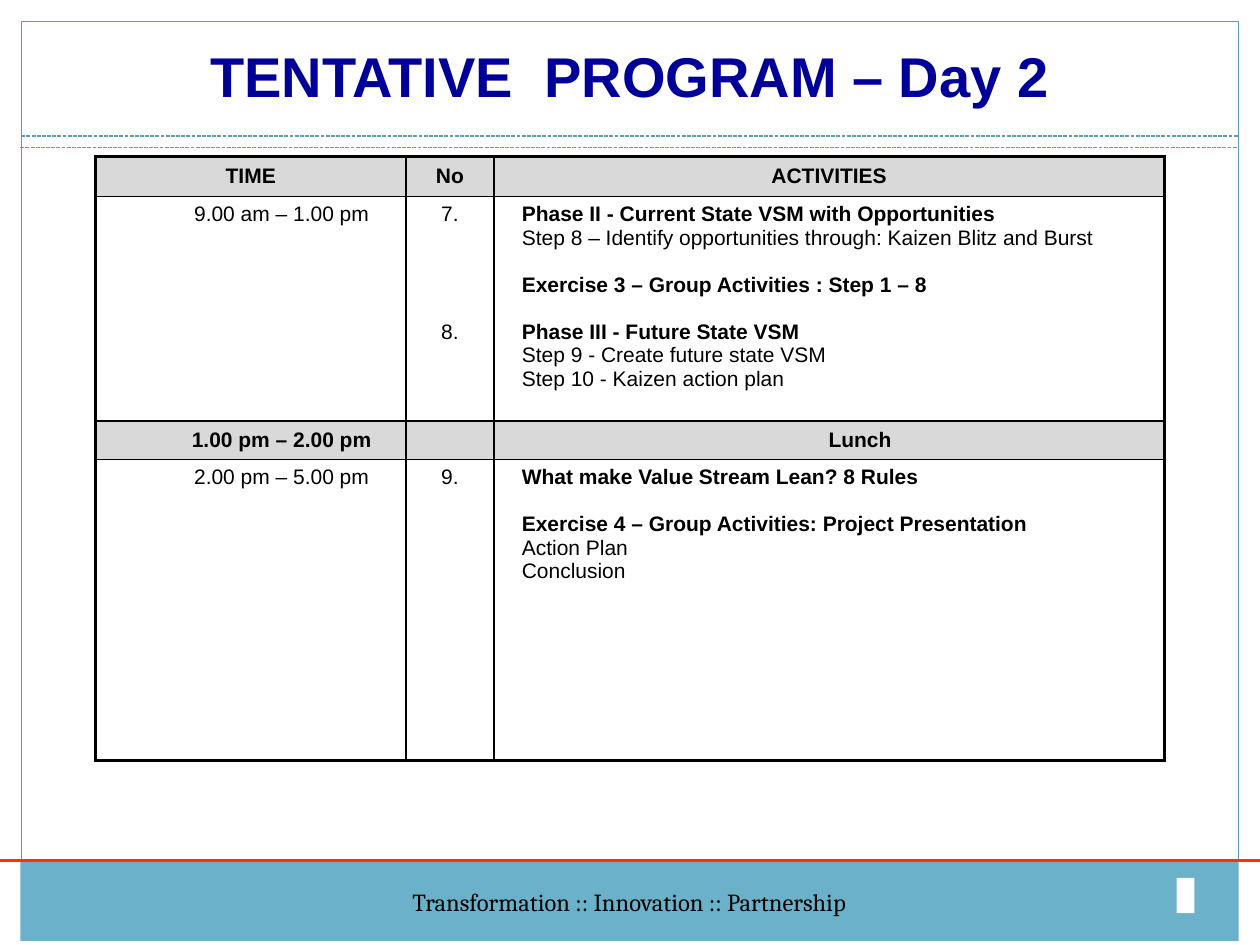
from lxml import etree
from pptx import Presentation
from pptx.dml.color import RGBColor
from pptx.enum.dml import MSO_LINE
from pptx.enum.shapes import MSO_CONNECTOR, MSO_SHAPE
from pptx.enum.text import MSO_ANCHOR, PP_ALIGN
from pptx.oxml.ns import qn
from pptx.util import Cm, Pt

RECTANGLE = MSO_SHAPE.RECTANGLE
STRAIGHT = MSO_CONNECTOR.STRAIGHT
DASH = MSO_LINE.SQUARE_DOT
CENTER, LEFT = PP_ALIGN.CENTER, PP_ALIGN.LEFT
TOP, MIDDLE = MSO_ANCHOR.TOP, MSO_ANCHOR.MIDDLE

BLACK = RGBColor(0x00, 0x00, 0x00)
WHITE = RGBColor(0xFF, 0xFF, 0xFF)
GREY = RGBColor(0xD9, 0xD9, 0xD9)
NAVY = RGBColor(0x00, 0x00, 0x99)
TEAL = RGBColor(0x5E, 0x9C, 0xB1)
FOOTER_BLUE = RGBColor(0x6B, 0xB1, 0xC9)
ORANGE = RGBColor(0xFF, 0x33, 0x00)

LINE_HEIGHT = 13.43


def format_text(paragraph, name, size, color, bold=False, alignment=CENTER):
    paragraph.alignment = alignment
    for run in paragraph.runs:
        run.font.name = name
        run.font.size = Pt(size)
        run.font.bold = bold
        run.font.color.rgb = color


def set_borders(cell, widths):
    properties = cell._tc.get_or_add_tcPr()
    for position, (side, width) in enumerate(zip("LRTB", widths)):
        border = etree.Element(qn(f"a:ln{side}"), w=str(Pt(width)))
        fill = etree.SubElement(border, qn("a:solidFill"))
        etree.SubElement(fill, qn("a:srgbClr"), val=str(BLACK))
        properties.insert(position, border)


presentation = Presentation()
presentation.slide_width = Cm(25.4)
presentation.slide_height = Cm(19.05)
slide = presentation.slides.add_slide(presentation.slide_layouts[6])
shapes = slide.shapes

footer = shapes.add_shape(RECTANGLE, Cm(0.41), Cm(17.37), Cm(24.56), Cm(1.6))
frame = shapes.add_shape(RECTANGLE, Cm(0.43), Cm(0.43), Cm(24.54), Cm(16.94))
number_box = shapes.add_shape(RECTANGLE, Cm(23.72), Cm(17.7), Cm(0.36), Cm(0.71))
for shape, color in ((footer, FOOTER_BLUE), (number_box, WHITE)):
    shape.shadow.inherit = False
    shape.fill.solid()
    shape.fill.fore_color.rgb = color
    shape.line.fill.background()
frame.shadow.inherit = False
frame.fill.background()
frame.line.color.rgb = TEAL
frame.line.width = Pt(0.75)

footer.text_frame.text = "Transformation :: Innovation :: Partnership"
footer.text_frame.vertical_anchor = MIDDLE
format_text(footer.text_frame.paragraphs[0], "Cambria", 14, BLACK)

for left, right, y, color, width, dash in (
    (0.41, 24.94, 2.97, TEAL, 0.75, DASH),
    (0.43, 24.97, 2.74, TEAL, 0.75, DASH),
    (0, 25.4, 17.35, ORANGE, 2, None),
):
    connector = shapes.add_connector(STRAIGHT, Cm(left), Cm(y), Cm(right), Cm(y))
    connector.line.color.rgb = color
    connector.line.width = Pt(width)
    connector.line.dash_style = dash
    etree.SubElement(connector._element.spPr, qn("a:effectLst"))

# Each entry holds text, bold and the number of empty lines above it.
rows = [
    [[("TIME", True, 0)], [("No", True, 0)], [("ACTIVITIES", True, 0)]],
    [
        [("9.00 am – 1.00 pm", False, 0)],
        [("7.", False, 0), ("8.", False, 4)],
        [
            ("Phase II - Current State VSM with Opportunities", True, 0),
            ("Step 8 – Identify opportunities through: Kaizen Blitz and Burst", False, 0),
            ("Exercise 3 – Group Activities : Step 1 – 8", True, 1),
            ("Phase III - Future State VSM", True, 1),
            ("Step 9 - Create future state VSM", False, 0),
            ("Step 10 - Kaizen action plan", False, 0),
        ],
    ],
    [[("1.00 pm – 2.00 pm", True, 0)], [], [("Lunch", True, 0)]],
    [
        [("2.00 pm – 5.00 pm", False, 0)],
        [("9.", False, 0)],
        [
            ("What make Value Stream Lean? 8 Rules", True, 0),
            ("Exercise 4 – Group Activities: Project Presentation", True, 1),
            ("Action Plan", False, 0),
            ("Conclusion", False, 0),
        ],
    ],
]
column_widths = [6.25, 1.78, 13.51]
row_heights = [0.81, 4.53, 0.74, 6.07]
last_row, last_column = len(rows) - 1, len(column_widths) - 1

table = shapes.add_table(
    len(rows), len(column_widths), Cm(1.93), Cm(3.15),
    Cm(sum(column_widths)), Cm(sum(row_heights)),
).table
table.first_row = False
table.horz_banding = False
for column, width in zip(table.columns, column_widths):
    column.width = Cm(width)
for row, height in zip(table.rows, row_heights):
    row.height = Cm(height)

for r, row in enumerate(rows):
    shaded = r in (0, 2)
    for c, lines in enumerate(row):
        cell = table.cell(r, c)
        cell.vertical_anchor = MIDDLE if shaded else TOP
        if shaded:
            cell.fill.solid()
            cell.fill.fore_color.rgb = GREY
        else:
            cell.fill.background()
        listed = c == last_column and not shaded
        if listed:
            cell.margin_left = Cm(0.56)
        elif r > 0 and c != 1:
            cell.margin_left = Cm(1.5)
        outer_edges = (c == 0, c == last_column, r == 0, r == last_row)
        set_borders(cell, [2.25 if outer else 1 for outer in outer_edges])

        cell.text_frame.text = "\n".join(text for text, bold, gap in lines)
        for paragraph, (text, bold, gap) in zip(cell.text_frame.paragraphs, lines):
            if gap:
                paragraph.space_before = Pt(round(gap * LINE_HEIGHT, 1))
            format_text(paragraph, "Arial", 12, BLACK, bold, LEFT if listed else CENTER)
        if not lines:
            end = etree.SubElement(cell.text_frame.paragraphs[0]._p, qn("a:endParaRPr"))
            end.set("sz", "1200")

title = shapes.add_textbox(Cm(1.9), Cm(0.71), Cm(21.6), Cm(1.6))
title.text_frame.word_wrap = True
title.text_frame.text = "TENTATIVE  PROGRAM – Day 2"
format_text(title.text_frame.paragraphs[0], "Arial", 32, NAVY, True)

presentation.save("out.pptx")
